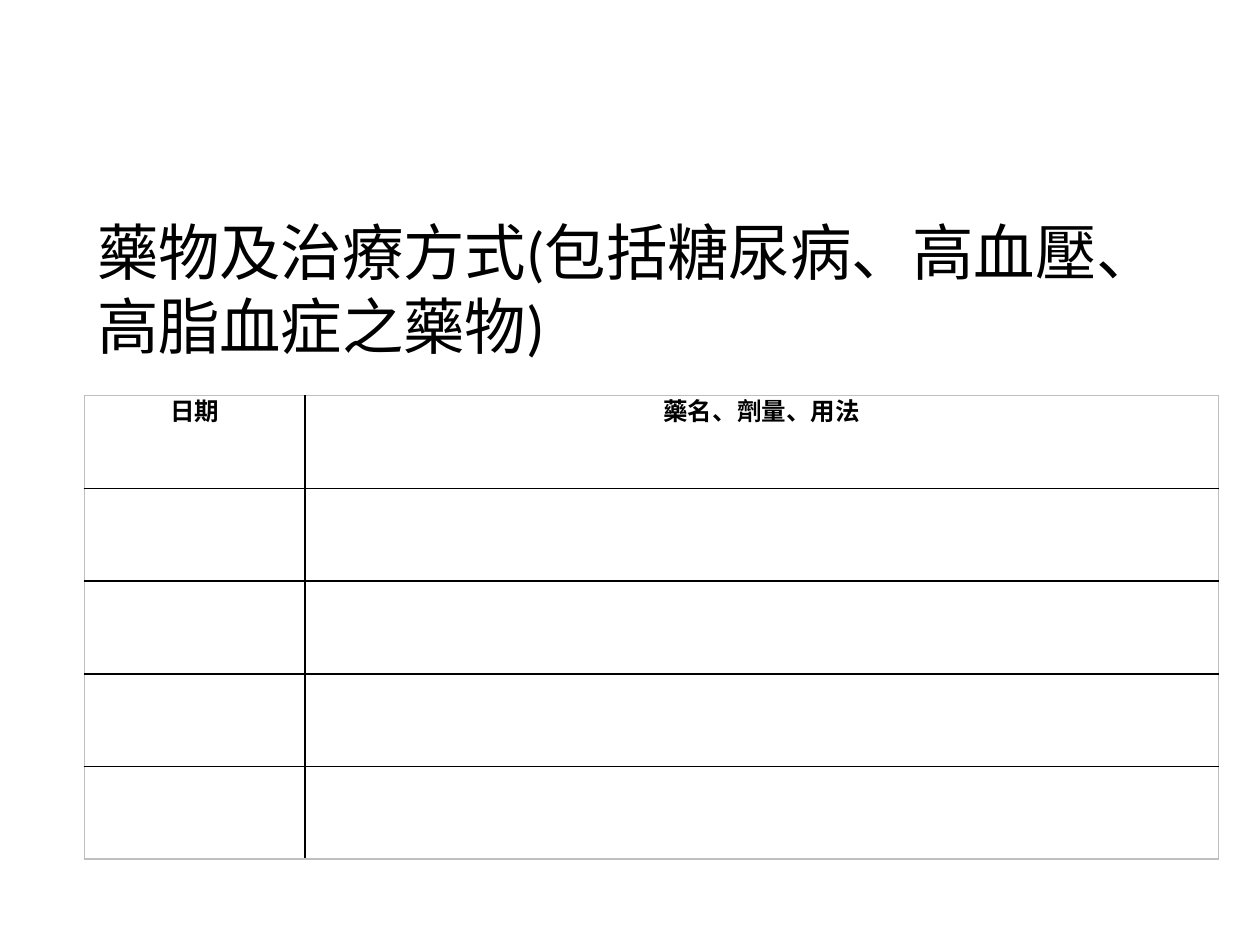
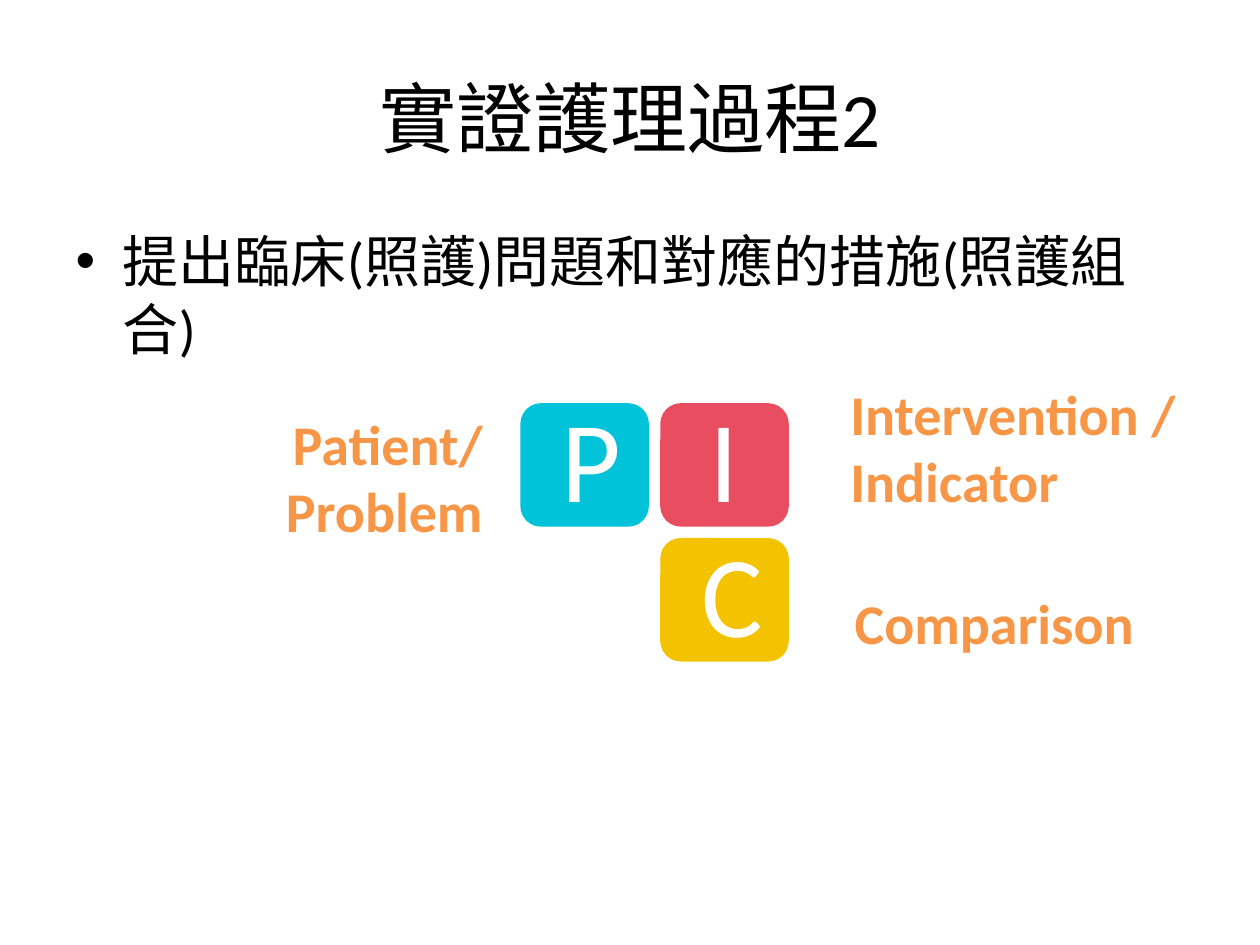
from collections import namedtuple

from lxml import etree
from pptx import Presentation, util as u
from pptx.dml.color import RGBColor
from pptx.enum import shapes, text
from pptx.oxml import ns

BLACK = RGBColor(0x00, 0x00, 0x00)
WHITE = RGBColor(0xFF, 0xFF, 0xFF)
GREY = RGBColor(0xBF, 0xBF, 0xBF)
ORANGE = RGBColor(0xF7, 0x96, 0x46)
CYAN = RGBColor(0x00, 0xC3, 0xD9)
RED = RGBColor(0xE9, 0x4E, 0x60)
YELLOW = RGBColor(0xF3, 0xC3, 0x01)

WIDTH, HEIGHT = u.Inches(10), u.Inches(7.5)
COLUMNS, ROWS = 100, 75
LEFT, CENTER, RIGHT = text.PP_ALIGN.LEFT, text.PP_ALIGN.CENTER, text.PP_ALIGN.RIGHT

Box = namedtuple("Box", "left top width height")


def columns(count):
    """Return the width of a number of grid columns."""
    return u.Emu(round(WIDTH * count / COLUMNS))


def rows(count):
    """Return the height of a number of grid rows."""
    return u.Emu(round(HEIGHT * count / ROWS))


def area(box):
    """Turn a box in grid units into slide lengths."""
    return columns(box.left), rows(box.top), columns(box.width), rows(box.height)


def write(frame, lines, size, color=BLACK, align=LEFT, bold=False, face="Calibri"):
    """Fill a text frame with paragraphs of one style."""
    frame.word_wrap = True
    frame.auto_size = text.MSO_AUTO_SIZE.NONE
    frame.text = "\n".join(lines)
    for paragraph in frame.paragraphs:
        paragraph.alignment = align
        font = paragraph.font
        font.size, font.name, font.bold = u.Pt(size), face, bold
        font.color.rgb = color


def fill_placeholder(holder, box, line, size, align=LEFT):
    """Move a placeholder to a box and write its line."""
    holder.left, holder.top, holder.width, holder.height = area(box)
    write(holder.text_frame, [line], size, align=align)


def set_border(cell, side, color):
    """Draw one side of a table cell."""
    border = etree.SubElement(cell._tc.get_or_add_tcPr(), ns.qn(f"a:{side}"), w=str(u.Pt(1)))
    fill = etree.SubElement(border, ns.qn("a:solidFill"))
    etree.SubElement(fill, ns.qn("a:srgbClr"), val=str(color))


def add_record_table(slide, box, headings, shares, row_count):
    """Add a ruled form with headings and empty rows below."""
    table = slide.shapes.add_table(row_count, len(headings), *area(box)).table
    table.first_row = table.horz_banding = False
    for column, share in zip(table.columns, shares):
        column.width = columns(box.width * share / sum(shares))
    last_row, last_column = row_count - 1, len(headings) - 1
    for r, row in enumerate(table.rows):
        row.height = rows(box.height / row_count)
        for c, cell in enumerate(row.cells):
            edges = {"lnL": c == 0, "lnR": c == last_column,
                     "lnT": r == 0, "lnB": r == last_row}
            for side, outer in edges.items():
                set_border(cell, side, GREY if outer else BLACK)
            cell.fill.background()
            cell.margin_left = cell.margin_right = u.Inches(0.02)
            cell.margin_top = cell.margin_bottom = 0
    for cell, heading in zip(table.rows[0].cells, headings):
        write(cell.text_frame, [heading], 14, align=CENTER, bold=True, face="Arial")
        cell.text_frame.paragraphs[0].line_spacing = u.Pt(18)


def add_letter_tiles(slide, box, tiles, gap):
    """Place coloured letters on a two by two grid."""
    width, height = (box.width - gap) / 2, (box.height - gap) / 2
    for letter, color, column, row in tiles:
        place = Box(box.left + column * (width + gap), box.top + row * (height + gap),
                    width, height)
        tile = slide.shapes.add_shape(shapes.MSO_SHAPE.ROUNDED_RECTANGLE, *area(place))
        tile.shadow.inherit = False
        tile.fill.solid()
        tile.fill.fore_color.rgb = color
        tile.line.fill.background()
        frame = tile.text_frame
        write(frame, [letter], 66, WHITE, CENTER)
        frame.margin_left = frame.margin_right = columns(2.8)
        frame.margin_top = frame.margin_bottom = rows(2.8)
        frame.vertical_anchor = text.MSO_ANCHOR.MIDDLE
        frame.paragraphs[0].line_spacing = 0.9


def add_meaning(slide, box, lines, align):
    """Add the meaning of a letter beside its tile."""
    meaning = slide.shapes.add_textbox(*area(box))
    write(meaning.text_frame, lines, 32, ORANGE, align, bold=True)


def build_medication_slide(deck):
    """Build the form for medicines and treatments."""
    slide = deck.slides.add_slide(deck.slide_layouts[5])
    fill_placeholder(slide.shapes.title, Box(6.7, 11.5, 90, 22.7),
                     "藥物及治療方式(包括糖尿病、高血壓、高脂血症之藥物)", 35.1)
    add_record_table(slide, Box(6.7, 31.4, 90, 36.8),
                     ["日期", "藥名、劑量、用法"], [1.75, 7.25], 5)


def build_question_slide(deck):
    """Build the slide on framing the clinical question."""
    slide = deck.slides.add_slide(deck.slide_layouts[1])
    fill_placeholder(slide.shapes.title, Box(5, 3, 90, 12.5), "實證護理過程2", 44, CENTER)
    fill_placeholder(slide.placeholders[1], Box(5, 17.5, 90, 49.5),
                     "提出臨床(照護)問題和對應的措施(照護組合)", 32)
    add_letter_tiles(slide, Box(41.3, 32, 21.3, 20.5),
                     [("P", CYAN, 0, 0), ("I", RED, 1, 0), ("C", YELLOW, 1, 1)], 0.9)
    add_meaning(slide, Box(7.5, 32, 31.8, 11.8), ["Patient/Problem"], RIGHT)
    add_meaning(slide, Box(66.6, 46.2, 24.4, 6.4), ["Comparison"], RIGHT)
    add_meaning(slide, Box(66.5, 29.6, 28.3, 11.8), ["Intervention /", "Indicator"], LEFT)


def main():
    """Build and save the deck."""
    deck = Presentation()
    deck.slide_width, deck.slide_height = WIDTH, HEIGHT
    build_medication_slide(deck)
    build_question_slide(deck)
    deck.save("out.pptx")


if __name__ == "__main__":
    main()
